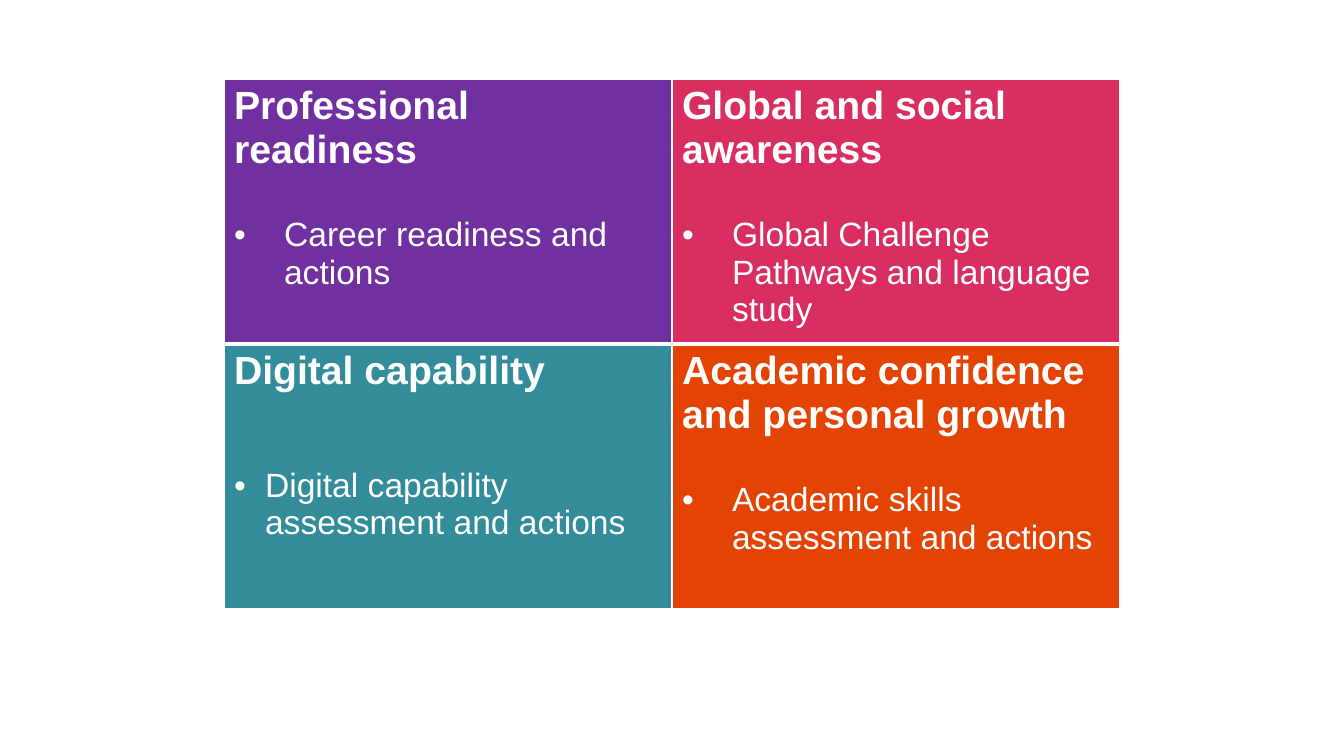
from lxml.etree import SubElement
from pptx import Presentation
from pptx.dml.color import RGBColor
from pptx.enum.text import MSO_ANCHOR as Anchor, PP_ALIGN as Align
from pptx.oxml.ns import qn
from pptx.util import Emu, Pt

WHITE = RGBColor(0xFF, 0xFF, 0xFF)
PURPLE = RGBColor(0x70, 0x30, 0xA0)
PINK = RGBColor(0xD9, 0x2F, 0x60)
TEAL = RGBColor(0x32, 0x8C, 0x99)
ORANGE = RGBColor(0xE3, 0x43, 0x03)

# Heading, bullet, fill, bullet indent in px, gap above bullet in points
STRENGTHS = [
    [("Professional readiness", "Career readiness and actions", PURPLE, 50, 32),
     ("Global and social awareness",
      "Global Challenge Pathways and language study", PINK, 50, 32)],
    [("Digital capability", "Digital capability assessment and actions",
      TEAL, 31, 53),
     ("Academic confidence and personal growth",
      "Academic skills assessment and actions", ORANGE, 50, 32)],
]


def px(length):
    return Emu(round(length * 914400 / 100.8))


def write(paragraph, text, size, bold=False, indent=0, gap=0):
    """Fill a paragraph; a non-zero indent makes it a bullet."""
    paragraph.alignment = Align.LEFT
    paragraph.space_before = Pt(gap)
    if indent:
        properties = paragraph._p.get_or_add_pPr()
        properties.set("marL", str(px(indent)))
        properties.set("indent", str(-px(indent)))
        SubElement(properties, qn("a:buFont"), typeface="Arial")
        SubElement(properties, qn("a:buChar"), char="•")
    run = paragraph.add_run()
    run.text = text
    font = run.font
    font.name, font.size, font.bold = "Arial", Pt(size), bold
    font.color.rgb = WHITE


class StrengthsSlide:
    def __init__(self, deck):
        self.slide = deck.slides.add_slide(deck.slide_layouts[6])
        self.line_color = WHITE

    def grid(self, rows, left, top, column_width, row_height):
        columns = len(rows[0])
        table = self.slide.shapes.add_table(
            len(rows), columns, px(left), px(top),
            px(column_width * columns), px(row_height * len(rows))).table
        table.first_row = table.horz_banding = False
        for column in table.columns:
            column.width = px(column_width)
        for r, strengths in enumerate(rows):
            table.rows[r].height = px(row_height)
            for c, strength in enumerate(strengths):
                cell = table.cell(r, c)
                self.borders(cell, top=3 if r else 1,
                             bottom=1 if r == len(rows) - 1 else 3)
                self.strength(cell, *strength)

    def borders(self, cell, top, bottom):
        properties = cell._tc.get_or_add_tcPr()
        for side, width in (("L", 1), ("R", 1), ("T", top), ("B", bottom)):
            line = SubElement(properties, qn(f"a:ln{side}"), w=str(Pt(width)))
            fill = SubElement(line, qn("a:solidFill"))
            SubElement(fill, qn("a:srgbClr"), val=str(self.line_color))

    def strength(self, cell, heading, bullet, color, indent, gap):
        cell.fill.solid()
        cell.fill.fore_color.rgb = color
        cell.vertical_anchor = Anchor.TOP
        frame = cell.text_frame
        write(frame.paragraphs[0], heading, size=28, bold=True)
        write(frame.add_paragraph(), bullet, size=24, indent=indent, gap=gap)


def main():
    deck = Presentation()
    deck.slide_width, deck.slide_height = px(1344), px(756)
    StrengthsSlide(deck).grid(STRENGTHS, left=224, top=79,
                              column_width=448, row_height=265)
    deck.save("out.pptx")


if __name__ == "__main__":
    main()
